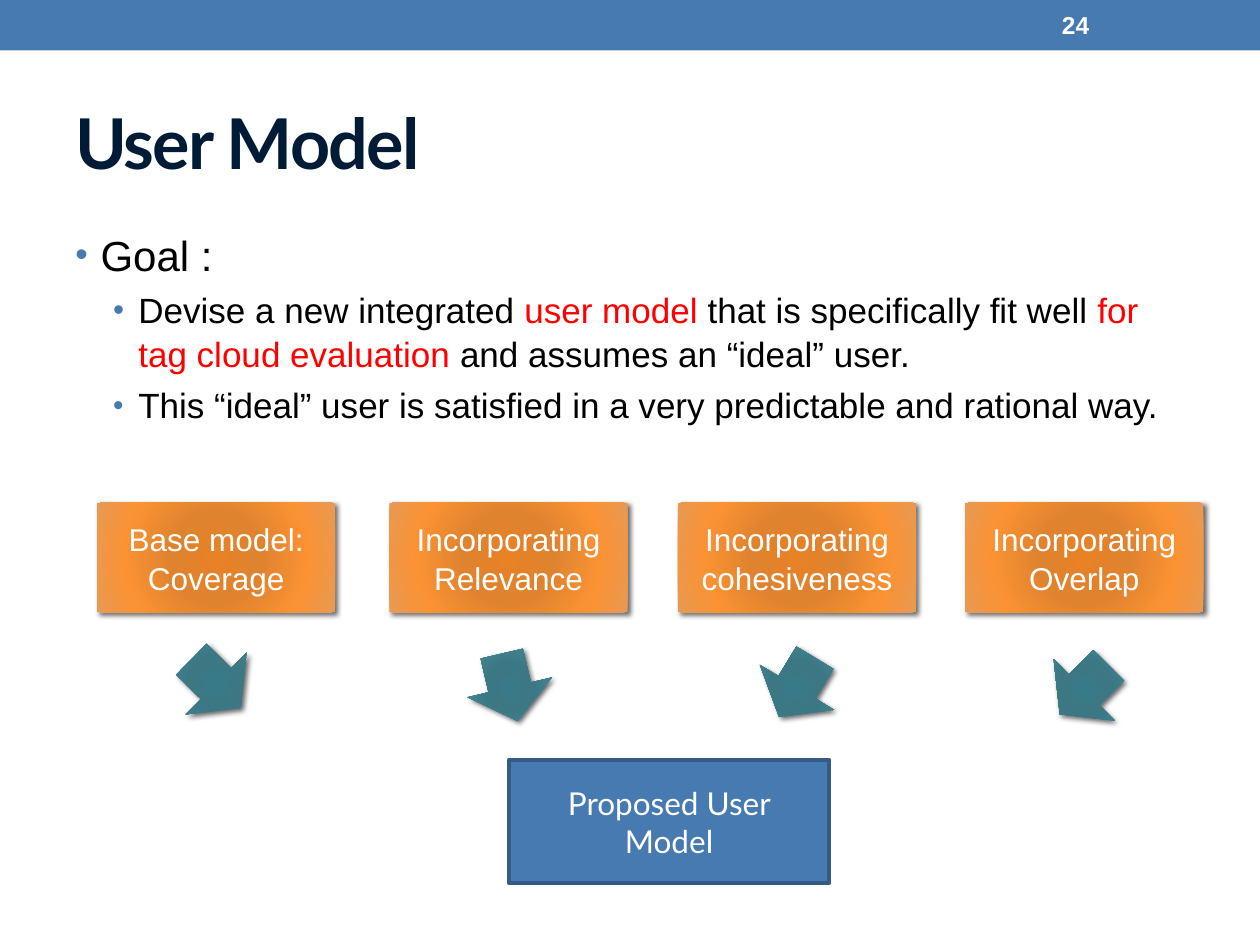
"""Build the User Model slide with python-pptx."""
from dataclasses import dataclass

from pptx import Presentation
from pptx.dml.color import RGBColor
from pptx.enum.shapes import MSO_SHAPE
from pptx.enum.text import MSO_ANCHOR, PP_ALIGN
from pptx.oxml import parse_xml
from pptx.oxml.ns import nsdecls, qn
from pptx.util import Inches, Pt

RECT = MSO_SHAPE.RECTANGLE
PROCESS = MSO_SHAPE.FLOWCHART_PROCESS
DOWN_ARROW = MSO_SHAPE.DOWN_ARROW
TOP, MIDDLE = MSO_ANCHOR.TOP, MSO_ANCHOR.MIDDLE
LEFT, CENTER = PP_ALIGN.LEFT, PP_ALIGN.CENTER


@dataclass(frozen=True)
class Theme:
    """Colours, fonts and type sizes."""
    blue: str = "477AB1"
    blue_edge: str = "355A83"
    navy: str = "001B36"
    black: str = "000000"
    white: str = "FFFFFF"
    red: str = "FF0000"
    orange: tuple = ((0, "E78227"), (34, "E0832E"), (70, "FA9233"), (100, "E89A53"))
    teal: tuple = ((0, "387A87"), (34, "3B7884"), (70, "428693"), (100, "51848E"))
    heading: str = "Lato"
    body: str = "Arial"
    title_size: int = 40
    goal_size: int = 24
    point_size: int = 20
    box_size: int = 18
    number_size: int = 14


T = Theme()

BODY = (
    (1, 0.2, 85, T.goal_size, (("Goal :", T.black),)),
    (2, 0.5, 90, T.point_size, (
        ("Devise a new integrated ", T.black),
        ("user model ", T.red),
        ("that is specifically fit well ", T.black),
        ("for tag cloud evaluation", T.red),
        (" and assumes an “ideal” user.", T.black))),
    (2, 0.5, 85, T.point_size, (
        ("This “ideal” user is satisfied in a very predictable and rational way.", T.black),)),
)

STEPS = (
    ("Base model: Coverage", 0.77, 1.37, 5.15, 314.6),
    ("Incorporating Relevance", 3.09, 3.7, 5.18, 346.8),
    ("Incorporating cohesiveness", 5.38, 5.98, 5.18, 31.2),
    ("Incorporating Overlap", 7.66, 8.26, 5.2, 45.1),
)


def add_run(p, text, size=T.box_size, color=T.white, font=T.body, bold=False, spacing=0):
    """Append a formatted run to a paragraph."""
    r = p.add_run()
    r.text = text
    r.font.size = Pt(size)
    r.font.name = font
    r.font.bold = bold
    r.font.color.rgb = RGBColor.from_string(color)
    if spacing:
        r.font._element.set("spc", str(spacing * 100))


def write(sp, text, align=LEFT, line_spacing=None, **fmt):
    """Put one vertically centred paragraph in a shape."""
    tf = sp.text_frame
    tf.word_wrap = True
    tf.vertical_anchor = MIDDLE
    p = tf.paragraphs[0]
    p.alignment = align
    p.line_spacing = line_spacing
    add_run(p, text, **fmt)


def add_label(s, at, text, **fmt):
    """Add a text box with one paragraph."""
    write(s.shapes.add_textbox(*map(Inches, at)), text, **fmt)


def add_block(s, kind, at, fill, line=None):
    """Add a flat preset shape."""
    sp = s.shapes.add_shape(kind, *map(Inches, at))
    sp.shadow.inherit = False
    sp.fill.solid()
    sp.fill.fore_color.rgb = RGBColor.from_string(fill)
    if line:
        sp.line.color.rgb = RGBColor.from_string(line)
        sp.line.width = Pt(2.08)
    else:
        sp.line.fill.background()
    return sp


def add_glossy(s, kind, at, stops, rotation=0):
    """Add a preset shape with a radial gradient and a soft shadow."""
    sp = add_block(s, kind, at, stops[0][1])
    sp.rotation = rotation
    props = sp._element.spPr
    gs = "".join(f'<a:gs pos="{pos * 1000}"><a:srgbClr val="{color}"/></a:gs>'
                 for pos, color in stops)
    props.replace(props.find(qn("a:solidFill")), parse_xml(
        f'<a:gradFill {nsdecls("a")} rotWithShape="1"><a:gsLst>{gs}</a:gsLst>'
        '<a:path path="circle"><a:fillToRect l="100000" t="100000" r="100000" b="100000"/>'
        '</a:path></a:gradFill>'))
    props.find(qn("a:effectLst")).append(parse_xml(
        f'<a:outerShdw {nsdecls("a")} blurRad="{Pt(3)}" dist="{Pt(2)}" dir="2700000" '
        f'rotWithShape="0"><a:srgbClr val="{T.black}"><a:alpha val="60000"/></a:srgbClr>'
        '</a:outerShdw>'))
    return sp


def set_bullet(p, indent, percent):
    """Give a paragraph a hanging coloured bullet."""
    props = p._p.get_or_add_pPr()
    props.set("marL", str(Inches(indent)))
    props.set("indent", str(Inches(-0.2)))
    for xml in (f'<a:buClr {nsdecls("a")}><a:srgbClr val="{T.blue}"/></a:buClr>',
                f'<a:buSzPct {nsdecls("a")} val="{percent * 1000}"/>',
                f'<a:buFont {nsdecls("a")} typeface="{T.body}"/>',
                f'<a:buChar {nsdecls("a")} char="•"/>'):
        props.append(parse_xml(xml))


def add_body(s, at, items):
    """Add the bulleted text."""
    tf = s.shapes.add_textbox(*map(Inches, at)).text_frame
    tf.word_wrap = True
    tf.vertical_anchor = TOP
    for i, (level, indent, percent, size, runs) in enumerate(items):
        p = tf.add_paragraph() if i else tf.paragraphs[0]
        p.level = level - 1
        p.line_spacing = 1.05
        p.space_before = Pt(size * 0.2)
        set_bullet(p, indent, percent)
        for text, color in runs:
            add_run(p, text, size=size, color=color)


def main():
    """Build and save the slide."""
    prs = Presentation()
    prs.slide_width, prs.slide_height = Inches(10), Inches(7.5)
    s = prs.slides.add_slide(prs.slide_layouts[6])
    add_block(s, RECT, (0, 0, 10, 0.4), T.blue)
    add_label(s, (0.5, 0.58, 9, 1.08), "User Model", size=T.title_size,
              color=T.navy, font=T.heading, bold=True, spacing=-1)
    add_body(s, (0.5, 1.75, 9, 5.33), BODY)
    for text, left, arrow_left, arrow_top, angle in STEPS:
        box = add_glossy(s, PROCESS, (left, 3.99, 1.89, 0.87), T.orange)
        write(box, text, align=CENTER, line_spacing=1.05)
        add_glossy(s, DOWN_ARROW, (arrow_left, arrow_top, 0.69, 0.55), T.teal, angle)
    result = add_block(s, PROCESS, (4.04, 6.03, 2.54, 0.98), T.blue, T.blue_edge)
    write(result, "Proposed User Model", align=CENTER, font=T.heading)
    add_label(s, (8.33, 0.02, 1.17, 0.36), "24", size=T.number_size, bold=True)
    prs.save("out.pptx")


if __name__ == "__main__":
    main()
